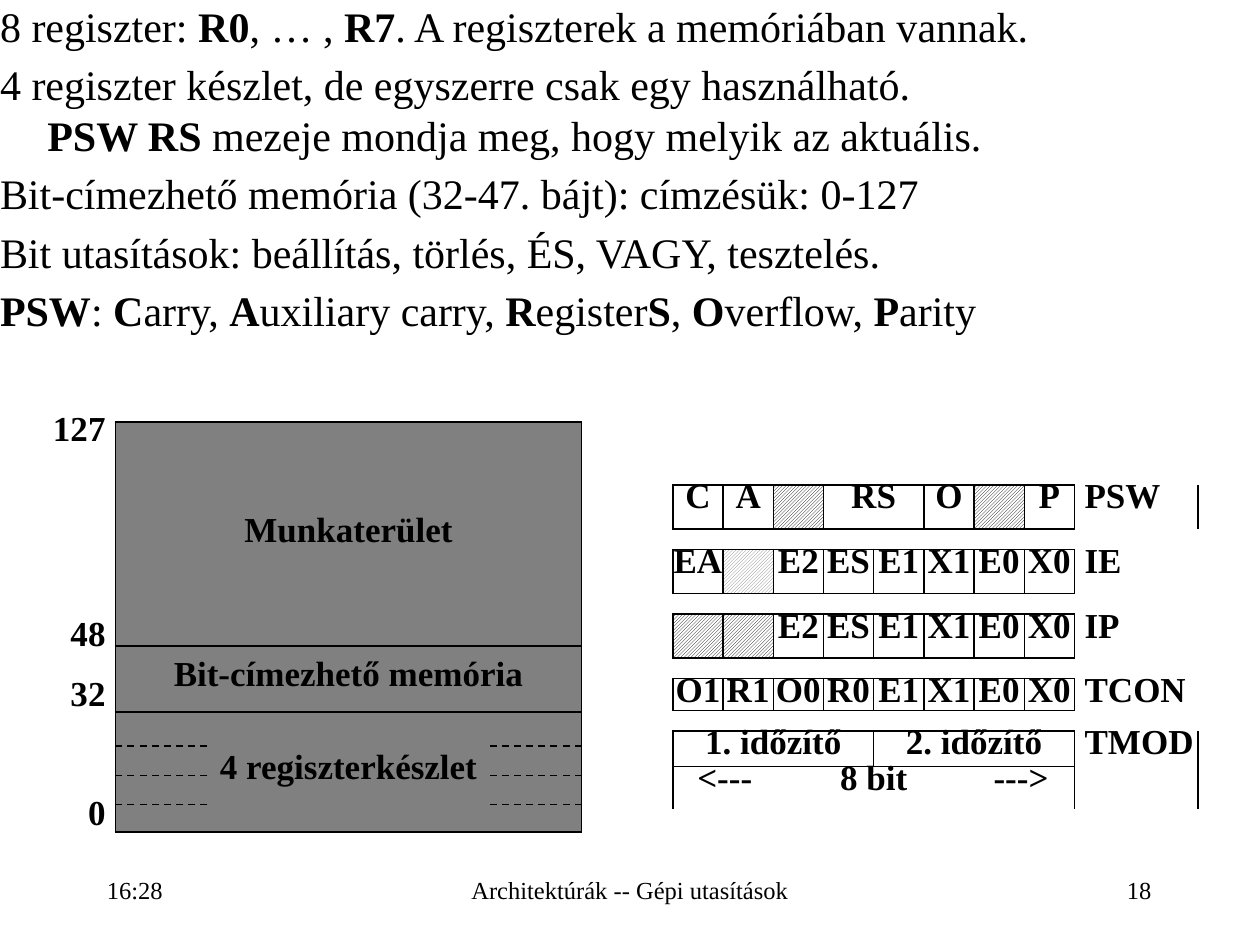
from lxml.etree import SubElement
from pptx import Presentation
from pptx.dml.color import RGBColor
from pptx.enum.dml import MSO_LINE, MSO_PATTERN
from pptx.enum.shapes import MSO_CONNECTOR
from pptx.enum.text import MSO_ANCHOR, MSO_AUTO_SIZE, PP_ALIGN as ALIGN
from pptx.oxml import parse_xml
from pptx.oxml.ns import nsdecls, qn
from pptx.util import Pt

FONT = "Times New Roman"
BLACK, GREY, WHITE = "000000", "808080", "FFFFFF"
PLAIN_TABLE = "{2D5ABB26-0587-4C30-8999-92F81FD0307C}"

BODY = [
    "8 regiszter: *R0*, … , *R7*. A regiszterek a memóriában vannak.",
    "4 regiszter készlet, de egyszerre csak egy használható.\n"
    "*PSW RS* mezeje mondja meg, hogy melyik az aktuális.",
    "Bit-címezhető memória (32-47. bájt): címzésük: 0-127",
    "Bit utasítások: beállítás, törlés, ÉS, VAGY, tesztelés.",
    "*PSW*: *C*arry, *A*uxiliary carry, *R*egister*S*, *O*verflow, *P*arity",
]

# Each register: name, row height, hatch colour, fields as (text, bits); no text means hatched
TIMER_FIELDS = [(text, 1) for text in ("E1", "X1", "E0", "X0")]
REGISTERS = [
    ("PSW", 25.1, BLACK, [("C", 1), ("A", 1), ("", 1), ("RS", 2), ("O", 1), ("", 1), ("P", 1)]),
    ("IE", 25.1, GREY, [("EA", 1), ("", 1), ("E2", 1), ("ES", 1)] + TIMER_FIELDS),
    ("IP", 25.1, BLACK, [("", 1), ("", 1), ("E2", 1), ("ES", 1)] + TIMER_FIELDS),
    ("TCON", 18, BLACK, [("O1", 1), ("R1", 1), ("O0", 1), ("R0", 1)] + TIMER_FIELDS),
    ("TMOD", 20.2, BLACK, [("1. időzítő", 4), ("2. időzítő", 4)]),
]
MEMORY = [("Munkaterület", 128), ("Bit-címezhető memória", 37.6), ("4 regiszterkészlet", 68.6)]
# Address and the space above it
ADDRESSES = [("127", 0), ("48", 93), ("32", 10.6), ("0", 44)]


def color(value):
    return RGBColor.from_string(value)


def write(frame, text, size=20, bold=False, align=ALIGN.LEFT, spacing=1.0, before=0):
    """Add a paragraph; asterisks switch bold, a newline breaks the line."""
    first = frame.paragraphs[0]
    paragraph = frame.add_paragraph() if first.runs else first
    paragraph.alignment = align
    paragraph.line_spacing = spacing
    paragraph.space_before = Pt(before)
    for index, part in enumerate(text.split("*")):
        for number, piece in enumerate(part.split("\n")):
            if number:
                paragraph.add_line_break()
            if piece:
                run = paragraph.add_run()
                run.text = piece
                run.font.name, run.font.size = FONT, Pt(size)
                run.font.bold = bold or index % 2 == 1
                run.font.color.rgb = color(BLACK)
    return paragraph


def add_text_box(slide, left, top, width, height, anchor=MSO_ANCHOR.TOP):
    frame = slide.shapes.add_textbox(Pt(left), Pt(top), Pt(width), Pt(height)).text_frame
    frame.word_wrap = True
    frame.vertical_anchor = anchor
    return frame


def add_table(slide, left, top, columns, rows):
    frame = slide.shapes.add_table(len(rows), len(columns), Pt(left), Pt(top),
                                   Pt(sum(columns)), Pt(sum(rows)))
    table = frame.table
    table.first_row = table.horz_banding = False
    table._tbl.tblPr.find(qn("a:tableStyleId")).text = PLAIN_TABLE
    for column, width in zip(table.columns, columns):
        column.width = Pt(width)
    for row, height in zip(table.rows, rows):
        row.height = Pt(height)
    return table


def set_margins(cell, left=0, right=0, vertical=1.4):
    cell.margin_left, cell.margin_right = Pt(left), Pt(right)
    cell.margin_top = cell.margin_bottom = Pt(vertical)


def set_borders(cell, sides):
    properties = cell._tc.get_or_add_tcPr()
    for index, side in enumerate(side for side in "LRTB" if side in sides):
        properties.insert(index, parse_xml(
            f'<a:ln{side} {nsdecls("a")} w="12700"><a:solidFill>'
            f'<a:srgbClr val="{BLACK}"/></a:solidFill></a:ln{side}>'))


def shrink_empty(cell):
    """Keep an empty cell from stretching its row."""
    set_margins(cell, vertical=0)
    SubElement(cell._tc.txBody.p_lst[0], qn("a:endParaRPr"), sz="400")


def fill_cell(cell, text, align=ALIGN.CENTER):
    return write(cell.text_frame, text, bold=True, align=align, spacing=0.69, before=8)


def add_body(slide, left, top, width, height):
    body = slide.placeholders[1]
    body.left, body.top, body.width, body.height = Pt(left), Pt(top), Pt(width), Pt(height)
    frame = body.text_frame
    frame.auto_size = MSO_AUTO_SIZE.NONE
    frame.margin_left = frame.margin_right = frame.margin_top = frame.margin_bottom = 0
    for text in BODY:
        paragraph = write(frame, text, size=24, spacing=Pt(29), before=4.4)
        properties = paragraph._p.get_or_add_pPr()
        properties.set("marL", str(Pt(27)))
        properties.set("indent", str(Pt(-27)))
        SubElement(properties, qn("a:buNone"))


def add_field(table, row, start, text, bits, hatch):
    cell = table.cell(row, start)
    if bits > 1:
        cell.merge(table.cell(row, start + bits - 1))
    for column in range(start + 1, start + bits):
        covered = table.cell(row, column)
        shrink_empty(covered)
        set_borders(covered, "TBR" if column == start + bits - 1 else "TB")
    if text:
        set_margins(cell)
        fill_cell(cell, text)
    else:
        shrink_empty(cell)
        cell.fill.patterned()
        cell.fill.pattern = MSO_PATTERN.LIGHT_UPWARD_DIAGONAL
        cell.fill.fore_color.rgb = color(hatch)
        cell.fill.back_color.rgb = color(WHITE)
    set_borders(cell, "LRTB")


def add_registers(slide, left, top, bit_width=28.71, name_width=70.5, gap=11.8):
    heights = [height for register in REGISTERS for height in (register[1], gap)]
    heights[-1] = 24.5  # the last row holds the width note
    table = add_table(slide, left, top, [bit_width] * 8 + [name_width], heights)
    for index, (name, _, hatch, fields) in enumerate(REGISTERS):
        row, start = 2 * index, 0
        for text, bits in fields:
            add_field(table, row, start, text, bits, hatch)
            start += bits
        name_cell = table.cell(row, 8)
        set_margins(name_cell, left=5.8)
        fill_cell(name_cell, name, ALIGN.LEFT)
        set_borders(name_cell, "L")
        # Gap row below the register
        for column in range(9):
            cell = table.cell(row + 1, column)
            if row + 1 < len(heights) - 1:
                shrink_empty(cell)
                set_borders(cell, "TB" if column < 8 else "")
            elif column:
                shrink_empty(cell)
                set_borders(cell, {7: "TR", 8: "L"}.get(column, "T"))
    # Width note across all bits, spread by tab stops
    note = table.cell(len(heights) - 1, 0)
    note.merge(table.cell(len(heights) - 1, 7))
    inset = 14
    set_margins(note, left=inset)
    paragraph = fill_cell(note, "<---\t8 bit\t--->", ALIGN.LEFT)
    tabs = SubElement(paragraph._p.get_or_add_pPr(), qn("a:tabLst"))
    for position, kind in ((4 * bit_width - inset, "ctr"), (8 * bit_width - 2 * inset - 1, "r")):
        SubElement(tabs, qn("a:tab"), pos=str(Pt(position)), algn=kind)
    set_borders(note, "LTR")


def add_memory(slide, left, top, width):
    table = add_table(slide, left, top, [width], [height for _, height in MEMORY])
    for row, (text, _) in enumerate(MEMORY):
        cell = table.cell(row, 0)
        set_margins(cell, 7.2, 7.2, 3.6)
        cell.vertical_anchor = MSO_ANCHOR.MIDDLE
        cell.fill.solid()
        cell.fill.fore_color.rgb = color(GREY)
        fill_cell(cell, text)
        set_borders(cell, "LRTB")
    # Dashed marks between the four register sets
    marks = slide.shapes.add_group_shape().shapes
    for offset in (218.5, 202, 185):
        for start in (left, left + width - 52.5):
            line = marks.add_connector(MSO_CONNECTOR.STRAIGHT, Pt(start + 52.5), Pt(top + offset),
                                       Pt(start), Pt(top + offset))
            line.line.color.rgb = color(BLACK)
            line.line.width = Pt(1)
            line.line.dash_style = MSO_LINE.DASH
            SubElement(line._element.spPr, qn("a:effectLst"))
    # Addresses beside the memory
    frame = add_text_box(slide, 0, top - 12.4, left + 1.4, 262)
    for text, before in ADDRESSES:
        write(frame, text, bold=True, align=ALIGN.RIGHT, before=before)


def add_footer(slide, top, height):
    for text, left, width, align in (("16:28", 54, 149, ALIGN.LEFT),
                                     ("Architektúrák -- Gépi utasítások", 246, 228, ALIGN.CENTER),
                                     ("18", 516, 149, ALIGN.RIGHT)):
        frame = add_text_box(slide, left, top, width, height, MSO_ANCHOR.MIDDLE)
        write(frame, text, size=14, align=align, spacing=0.93)


def main():
    presentation = Presentation()
    presentation.slide_width, presentation.slide_height = Pt(720), Pt(540)
    slide = presentation.slides.add_slide(presentation.slide_layouts[1])
    title = slide.shapes.title._element
    title.getparent().remove(title)
    add_body(slide, 0, 0, 720, 237)
    add_registers(slide, 384.5, 277.2)
    add_memory(slide, 66, 241.2, 266.4)
    add_footer(slide, 491.8, 35.3)
    presentation.save("out.pptx")


if __name__ == "__main__":
    main()
